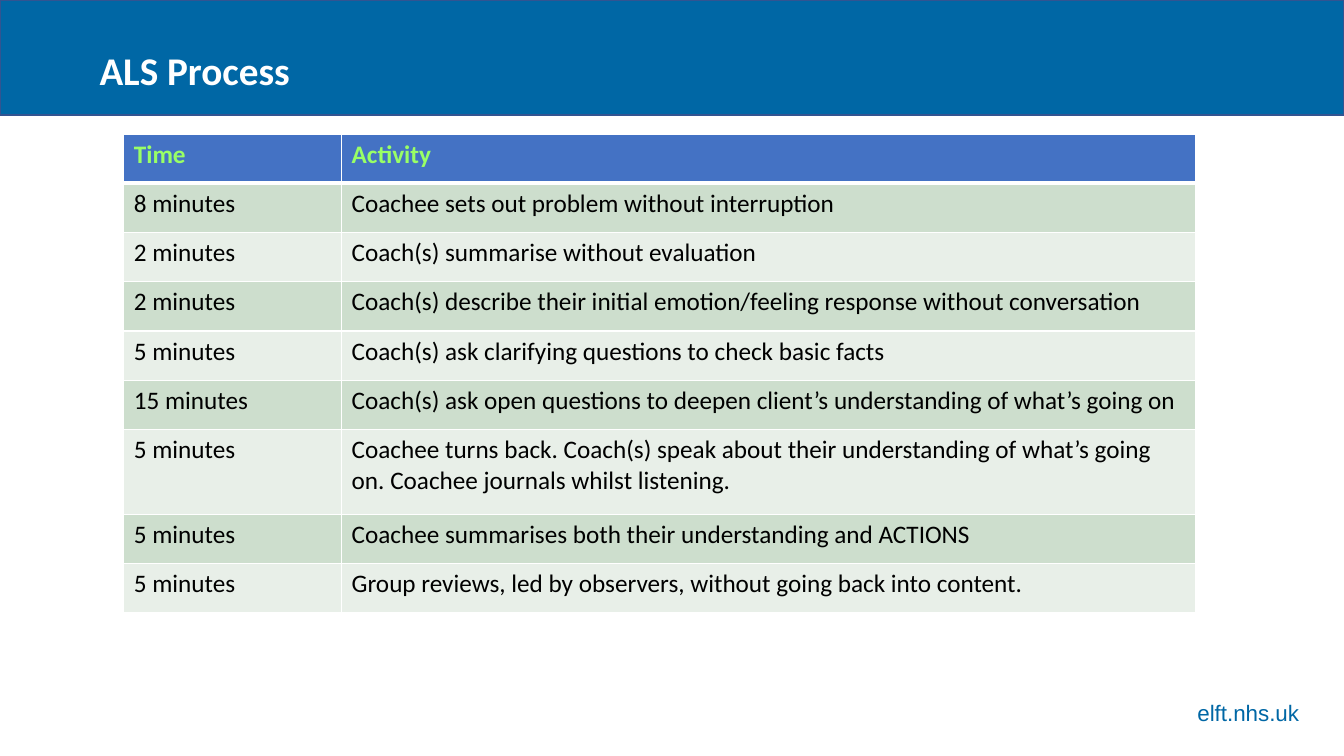
from dataclasses import dataclass
from typing import NamedTuple

from lxml.etree import SubElement
from pptx import Presentation
from pptx.dml.color import RGBColor
from pptx.enum.shapes import MSO_SHAPE
from pptx.enum.text import PP_ALIGN
from pptx.oxml.ns import qn
from pptx.slide import Slide
from pptx.table import _Cell
from pptx.text.text import TextFrame
from pptx.util import Cm, Pt


@dataclass(frozen=True)
class Theme:
    brand: str = "0067A5"
    banner_line: str = "325491"
    white: str = "FFFFFF"
    black: str = "000000"
    header_fill: str = "4472C4"
    header_text: str = "99FF66"
    bands: tuple[str, str] = ("CDDECD", "E8EFE8")
    heading_font: str = "Calibri"
    footer_font: str = "Arial"
    title_size: int = 28
    table_size: int = 18
    footer_size: int = 16
    thin_border: int = 1
    thick_border: int = 3


class Step(NamedTuple):
    time: str
    activity: str
    height: float = 1.24


THEME = Theme()
HEADER = Step("Time", "Activity")
STEPS = [
    Step("8 minutes", "Coachee sets out problem without interruption"),
    Step("2 minutes", "Coach(s) summarise without evaluation"),
    Step("2 minutes", "Coach(s) describe their initial emotion/feeling response without conversation"),
    Step("5 minutes", "Coach(s) ask clarifying questions to check basic facts"),
    Step("15 minutes", "Coach(s) ask open questions to deepen client’s understanding of what’s going on"),
    Step(
        "5 minutes",
        "Coachee turns back. Coach(s) speak about their understanding of what’s going on. "
        "Coachee journals whilst listening.",
        height=2.14,
    ),
    Step("5 minutes", "Coachee summarises both their understanding and ACTIONS"),
    Step("5 minutes", "Group reviews, led by observers, without going back into content."),
]
COLUMN_WIDTHS = (5.49, 21.51)


def write_text(
    frame: TextFrame,
    text: str,
    *,
    size: int,
    color: str,
    font: str = THEME.heading_font,
    bold: bool = False,
    align: PP_ALIGN = PP_ALIGN.LEFT,
) -> None:
    frame.word_wrap = True
    paragraph = frame.paragraphs[0]
    paragraph.alignment = align
    run = paragraph.add_run()
    run.text = text
    run.font.name = font
    run.font.size = Pt(size)
    run.font.bold = bold
    run.font.color.rgb = RGBColor.from_string(color)


def set_borders(cell: _Cell, *, top: int, bottom: int) -> None:
    """Draw white cell borders; widths are in points."""
    properties = cell._tc.get_or_add_tcPr()
    widths = {"lnL": THEME.thin_border, "lnR": THEME.thin_border, "lnT": top, "lnB": bottom}
    for side, width in widths.items():
        line = SubElement(properties, qn(f"a:{side}"), w=str(Pt(width)))
        fill = SubElement(line, qn("a:solidFill"))
        SubElement(fill, qn("a:srgbClr"), val=THEME.white)


def add_banner(slide: Slide) -> None:
    banner = slide.shapes.add_shape(MSO_SHAPE.RECTANGLE, 0, 0, Cm(33.87), Cm(2.9))
    banner.shadow.inherit = False
    banner.fill.solid()
    banner.fill.fore_color.rgb = RGBColor.from_string(THEME.brand)
    banner.line.color.rgb = RGBColor.from_string(THEME.banner_line)
    banner.line.width = Pt(1)


def add_process_table(slide: Slide) -> None:
    rows = [HEADER, *STEPS]
    table = slide.shapes.add_table(
        len(rows), len(COLUMN_WIDTHS), Cm(3.12), Cm(3.38),
        Cm(sum(COLUMN_WIDTHS)), Cm(sum(row.height for row in rows)),
    ).table
    for column, width in zip(table.columns, COLUMN_WIDTHS):
        column.width = Cm(width)

    for index, step in enumerate(rows):
        table.rows[index].height = Cm(step.height)
        is_header = index == 0
        fill = THEME.header_fill if is_header else THEME.bands[(index - 1) % 2]
        for column, text in enumerate((step.time, step.activity)):
            cell = table.cell(index, column)
            set_borders(
                cell,
                top=THEME.thick_border if index == 1 else THEME.thin_border,
                bottom=THEME.thick_border if is_header else THEME.thin_border,
            )
            cell.fill.solid()
            cell.fill.fore_color.rgb = RGBColor.from_string(fill)
            write_text(
                cell.text_frame,
                text,
                size=THEME.table_size,
                color=THEME.header_text if is_header else THEME.black,
                bold=is_header,
            )


def main() -> None:
    presentation = Presentation()
    presentation.slide_width, presentation.slide_height = Cm(33.87), Cm(19.05)
    slide = presentation.slides.add_slide(presentation.slide_layouts[6])

    footer = slide.shapes.add_textbox(Cm(28.37), Cm(17.5), Cm(4.62), Cm(0.94))
    write_text(
        footer.text_frame, "elft.nhs.uk", size=THEME.footer_size, color=THEME.brand,
        font=THEME.footer_font, align=PP_ALIGN.RIGHT,
    )
    add_banner(slide)
    title = slide.shapes.add_textbox(Cm(2.26), Cm(1.04), Cm(13.51), Cm(1.78))
    write_text(
        title.text_frame, "ALS Process", size=THEME.title_size, color=THEME.white, bold=True
    )
    add_process_table(slide)
    presentation.save("out.pptx")


if __name__ == "__main__":
    main()
